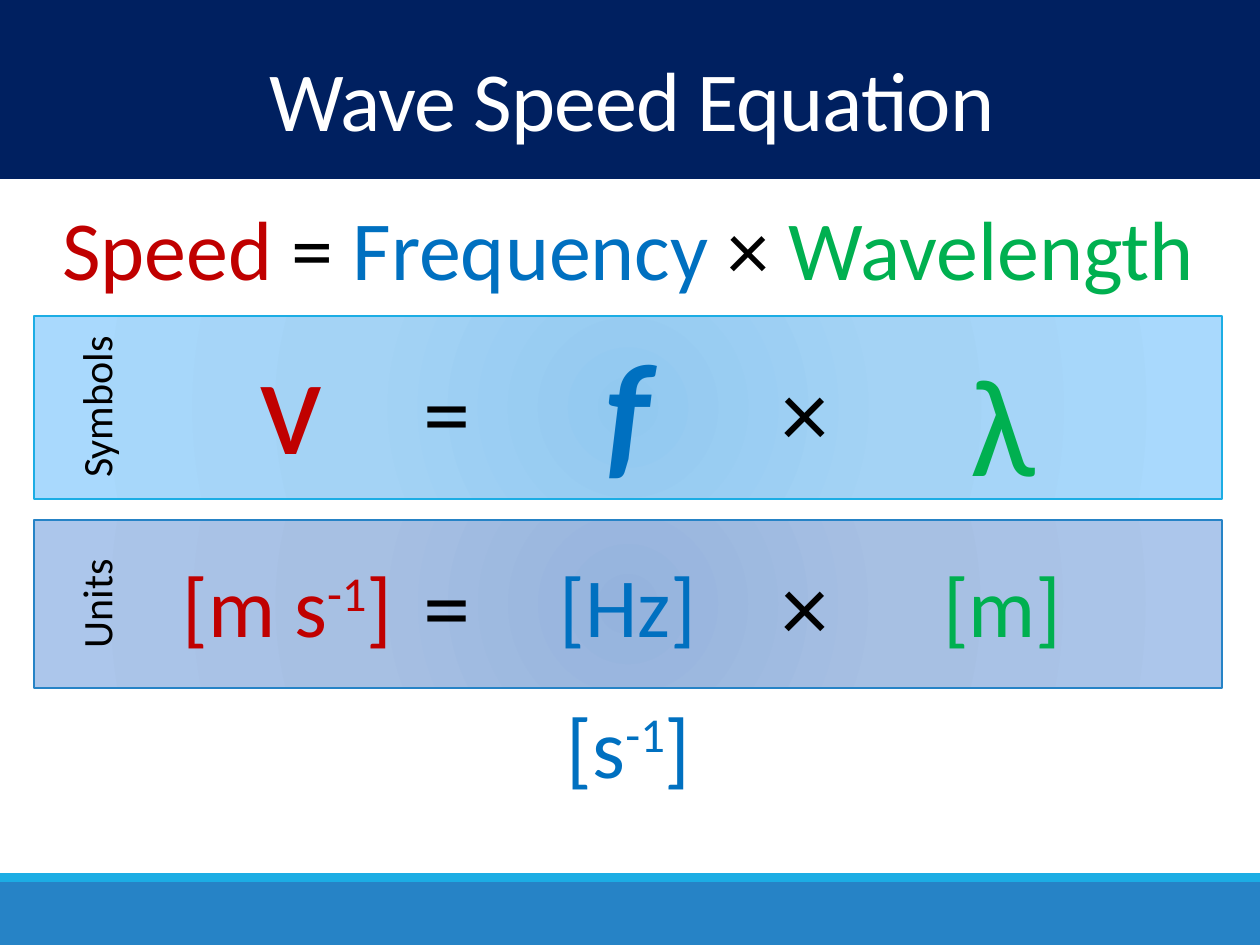
import pptx
import pptx.dml.color
import pptx.enum.shapes
import pptx.enum.text
import pptx.oxml
import pptx.oxml.ns
import pptx.util
from pptx.util import Inches

COLORS = {
    "navy": "002060", "blue": "2683C6", "cyan": "1CADE4",
    "speed": "C00000", "frequency": "0070C0", "wavelength": "00B050",
    "black": "000000", "white": "FFFFFF",
}
SYMBOL_STOPS = [(0, "92C9F0"), (45, "A4D3F5"), (100, "A9D9FD")]
UNIT_STOPS = [(0, "95B3DD"), (45, "A7C0E3"), (100, "ACC6EB")]


class SlideBuilder:
    """Holds the text style and the current slide, and draws its elements."""

    def __init__(self, slide, font="Calibri"):
        self.s = slide
        self.font = font

    def rgb(self, name):
        return pptx.dml.color.RGBColor.from_string(COLORS[name])

    def band(self, box, fill):
        sp = self.s.shapes.add_shape(
            pptx.enum.shapes.MSO_SHAPE.RECTANGLE, *map(Inches, box))
        sp.shadow.inherit = False
        sp.fill.solid()
        sp.fill.fore_color.rgb = self.rgb(fill)
        sp.line.fill.background()
        return sp

    def panel(self, box, stops, line):
        sp = self.band(box, line)
        sp.line.color.rgb = self.rgb(line)
        sp.line.width = pptx.util.Pt(1)
        stop_xml = "".join(
            f'<a:gs pos="{pos * 1000}"><a:srgbClr val="{color}"/></a:gs>'
            for pos, color in stops)
        grad = pptx.oxml.parse_xml(
            f'<a:gradFill {pptx.oxml.ns.nsdecls("a")} rotWithShape="1">'
            f'<a:gsLst>{stop_xml}</a:gsLst><a:path path="circle">'
            '<a:fillToRect l="50000" t="50000" r="50000" b="50000"/>'
            '</a:path></a:gradFill>')
        sp_pr = sp.element.spPr
        sp_pr.replace(sp_pr.find(pptx.oxml.ns.qn("a:solidFill")), grad)

    def run(self, p, text, size, color, bold=False, italic=False, **attrs):
        r = p.add_run()
        r.text = text
        r.font.name = self.font
        r.font.size = pptx.util.Pt(size)
        r.font.color.rgb = self.rgb(color)
        r.font.bold = bold
        r.font.italic = italic
        for name, value in attrs.items():
            r.font._element.set(name, str(value))

    def title(self, box, text, size, color):
        sp = self.s.shapes.title
        sp.left, sp.top, sp.width, sp.height = map(Inches, box)
        sp.element.getparent().append(sp.element)
        tf = sp.text_frame
        tf.vertical_anchor = pptx.enum.text.MSO_ANCHOR.MIDDLE
        p = tf.paragraphs[0]
        p.alignment = pptx.enum.text.PP_ALIGN.CENTER
        p.line_spacing = 0.85
        self.run(p, text, size, color, spc=-50)

    def text(self, box, runs, size, rotation=0, wrap=False, **style):
        sp = self.s.shapes.add_textbox(*map(Inches, box))
        sp.rotation = rotation
        tf = sp.text_frame
        tf.word_wrap = wrap
        p = tf.paragraphs[0]
        p.alignment = pptx.enum.text.PP_ALIGN.CENTER
        for text, color, *raised in runs:
            attrs = {"baseline": 30000} if raised else {}
            self.run(p, text, size, color, **style, **attrs)


def per_second(prefix, color):
    return [(prefix, color), ("-1", color, True), ("]", color)]


def main():
    prs = pptx.Presentation()
    prs.slide_width, prs.slide_height = Inches(10), Inches(7.5)
    b = SlideBuilder(prs.slides.add_slide(prs.slide_layouts[5]))

    b.band((0, 7, 10, 0.5), "blue")
    b.band((0, 6.93, 10, 0.07), "cyan")
    b.panel((0.27, 4.13, 9.43, 1.33), UNIT_STOPS, "blue")
    b.panel((0.27, 2.51, 9.43, 1.45), SYMBOL_STOPS, "cyan")
    b.band((0, 0, 10, 1.42), "navy")
    b.title((0.03, 0.42, 9.97, 0.84), "Wave Speed Equation", 48, "white")

    b.text((0.27, 1.51, 9.43, 0.91),
           [("Speed ", "speed"), ("= ", "black"), ("Frequency ", "frequency"),
            ("× ", "black"), ("Wavelength", "wavelength")], 48, wrap=True)

    b.text((0.09, 2.98, 1.34, 0.5), [("Symbols", "black")], 24, rotation=270)
    b.text((0.3, 4.54, 0.92, 0.5), [("Units", "black")], 24, rotation=270)

    for top in (2.75, 4.29):
        for sign, left in (("=", 3.25), ("×", 6.09)):
            b.text((left, top, 0.6, 1.01), [(sign, "black")], 54)

    b.text((1.94, 2.45, 0.74, 1.45), [("v", "speed")], 80)
    b.text((7.58, 2.62, 0.76, 1.45), [("λ", "wavelength")], 80)
    b.text((4.71, 2.51, 0.55, 1.45), [("f", "frequency")], 80,
           bold=True, italic=True)

    b.text((1.24, 4.34, 2.08, 0.91), per_second("[m s", "speed"), 48)
    b.text((7.36, 4.34, 1.19, 0.91), [("[m]", "wavelength")], 48)
    b.text((4.29, 4.34, 1.39, 0.91), [("[Hz]", "frequency")], 48)
    b.text((4.33, 5.46, 1.32, 0.91), per_second("[s", "frequency"), 48)

    prs.save("out.pptx")


if __name__ == "__main__":
    main()
